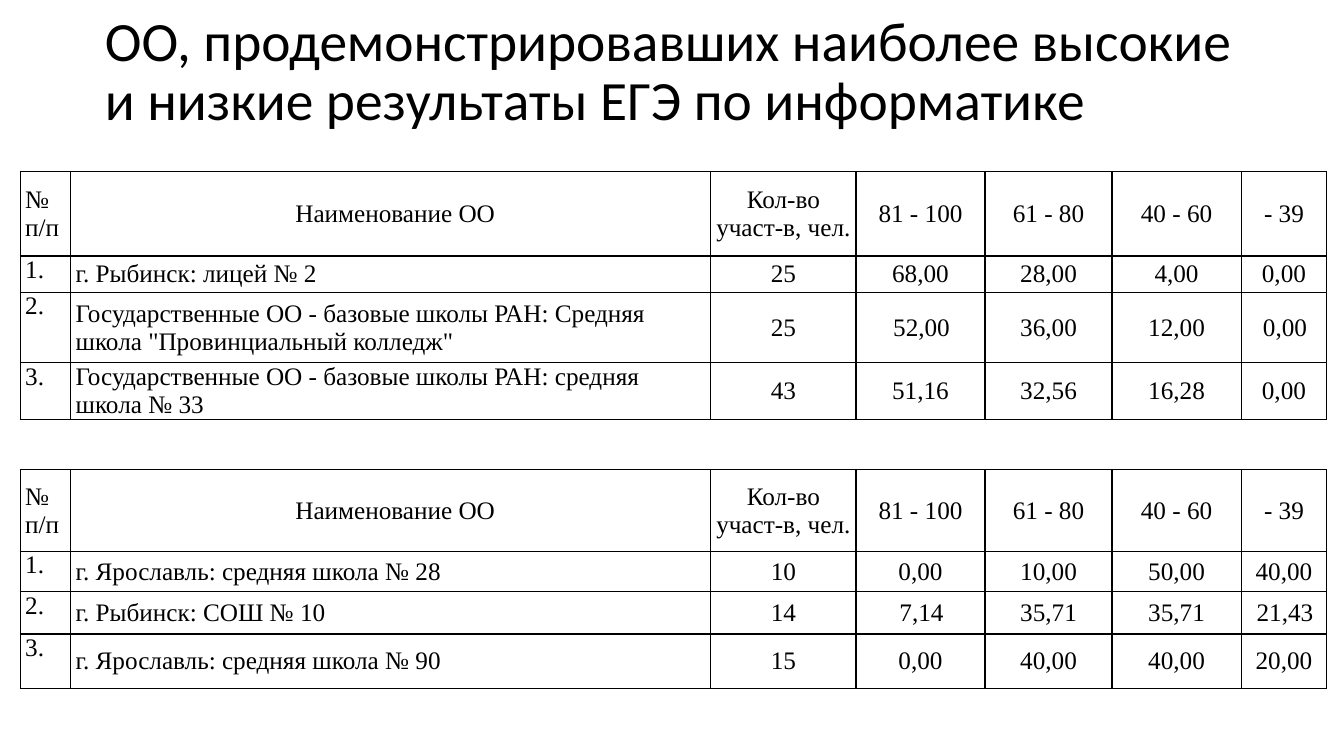
from dataclasses import dataclass

from pptx import Presentation
from pptx import util as u
from pptx.dml.color import RGBColor
from pptx.enum import text
from pptx.oxml import parse_xml
from pptx.oxml.ns import nsdecls

BLACK = "000000"
LEFT = 0.2
COLS = [0.5, 6.35, 1.44, 1.28, 1.26, 1.28, 0.85]
HEAD = ["№ п/п", "Наименование ОО", "Кол-во участ-в, чел.",
        "81 - 100", "61 - 80", "40 - 60", "- 39"]


@dataclass
class Grid:
    top: float
    rows: list[float]
    data: list[list[str]]


GRIDS = [
    # Highest results
    Grid(1.7, [0.84, 0.36, 0.7, 0.56], [
        ["г. Рыбинск: лицей № 2", "25", "68,00", "28,00", "4,00", "0,00"],
        ['Государственные ОО - базовые школы РАН: Средняя школа "Провинциальный колледж"',
         "25", "52,00", "36,00", "12,00", "0,00"],
        ["Государственные ОО - базовые школы РАН: средняя школа № 33",
         "43", "51,16", "32,56", "16,28", "0,00"],
    ]),
    # Lowest results
    Grid(4.66, [0.81, 0.4, 0.42, 0.54], [
        ["г. Ярославль: средняя школа № 28", "10", "0,00", "10,00", "50,00", "40,00"],
        ["г. Рыбинск: СОШ № 10", "14", "7,14", "35,71", "35,71", "21,43"],
        ["г. Ярославль: средняя школа № 90", "15", "0,00", "40,00", "40,00", "20,00"],
    ]),
]


def style(par, face: str, size: float, color: str, align) -> None:
    par.font.name = face
    par.font.size = u.Pt(size)
    par.font.color.rgb = RGBColor.from_string(color)
    par.alignment = align


def border(cell, color: str, width: float) -> None:
    props = cell._tc.get_or_add_tcPr()
    for side in "LRTB":
        props.append(parse_xml(
            f'<a:ln{side} {nsdecls("a")} w="{u.Pt(width)}"><a:solidFill>'
            f'<a:srgbClr val="{color}"/></a:solidFill></a:ln{side}>'))


def fill_cell(cell, words: str, row: int, col: int) -> None:
    cell.text = words
    cell.margin_left = cell.margin_right = u.Inches(0.05)
    cell.margin_top = cell.margin_bottom = 0
    top = row > 0 and col == 0
    cell.vertical_anchor = text.MSO_ANCHOR.TOP if top else text.MSO_ANCHOR.MIDDLE
    border(cell, BLACK, 1)
    cell.fill.background()
    par = cell.text_frame.paragraphs[0]
    mid = col > 1 or (row == 0 and col == 1)
    style(par, "Times New Roman", 18, BLACK,
          text.PP_ALIGN.CENTER if mid else text.PP_ALIGN.LEFT)
    # Small indents of the name heading and of two cells in the second row
    props = par._p.get_or_add_pPr()
    if (row, col) == (0, 1):
        props.set("marL", str(u.Inches(0.09)))
    elif row == 2 and col in (3, 6):
        props.set("indent", str(u.Inches(0.02)))


def draw_grid(slide, grid: Grid) -> None:
    frame = slide.shapes.add_table(
        len(grid.rows), len(COLS), u.Inches(LEFT), u.Inches(grid.top),
        u.Inches(sum(COLS)), u.Inches(sum(grid.rows)))
    table = frame.table
    table.first_row = table.horz_banding = False
    for col, width in zip(table.columns, COLS):
        col.width = u.Inches(width)
    for row, height in zip(table.rows, grid.rows):
        row.height = u.Inches(height)
    lines = [HEAD] + [[f"{n}.", *line] for n, line in enumerate(grid.data, 1)]
    for r, line in enumerate(lines):
        for c, words in enumerate(line):
            fill_cell(table.cell(r, c), words, r, c)


def draw_title(slide, words: str) -> None:
    title = slide.shapes.title
    title.left, title.top = u.Inches(0.94), u.Inches(0)
    title.width, title.height = u.Inches(11.5), u.Inches(1.45)
    frame = title.text_frame
    frame.text = words
    frame.word_wrap = True
    frame.auto_size = text.MSO_AUTO_SIZE.NONE
    frame.vertical_anchor = text.MSO_ANCHOR.MIDDLE
    par = frame.paragraphs[0]
    par.line_spacing = 0.9
    style(par, "Calibri", 39.6, BLACK, text.PP_ALIGN.LEFT)


def main() -> None:
    deck = Presentation()
    deck.slide_width, deck.slide_height = u.Inches(13.33), u.Inches(7.5)
    slide = deck.slides.add_slide(deck.slide_layouts[5])
    draw_title(slide, "ОО, продемонстрировавших наиболее высокие "
                      "и низкие результаты ЕГЭ по информатике")
    for grid in GRIDS:
        draw_grid(slide, grid)
    deck.save("out.pptx")


if __name__ == "__main__":
    main()
